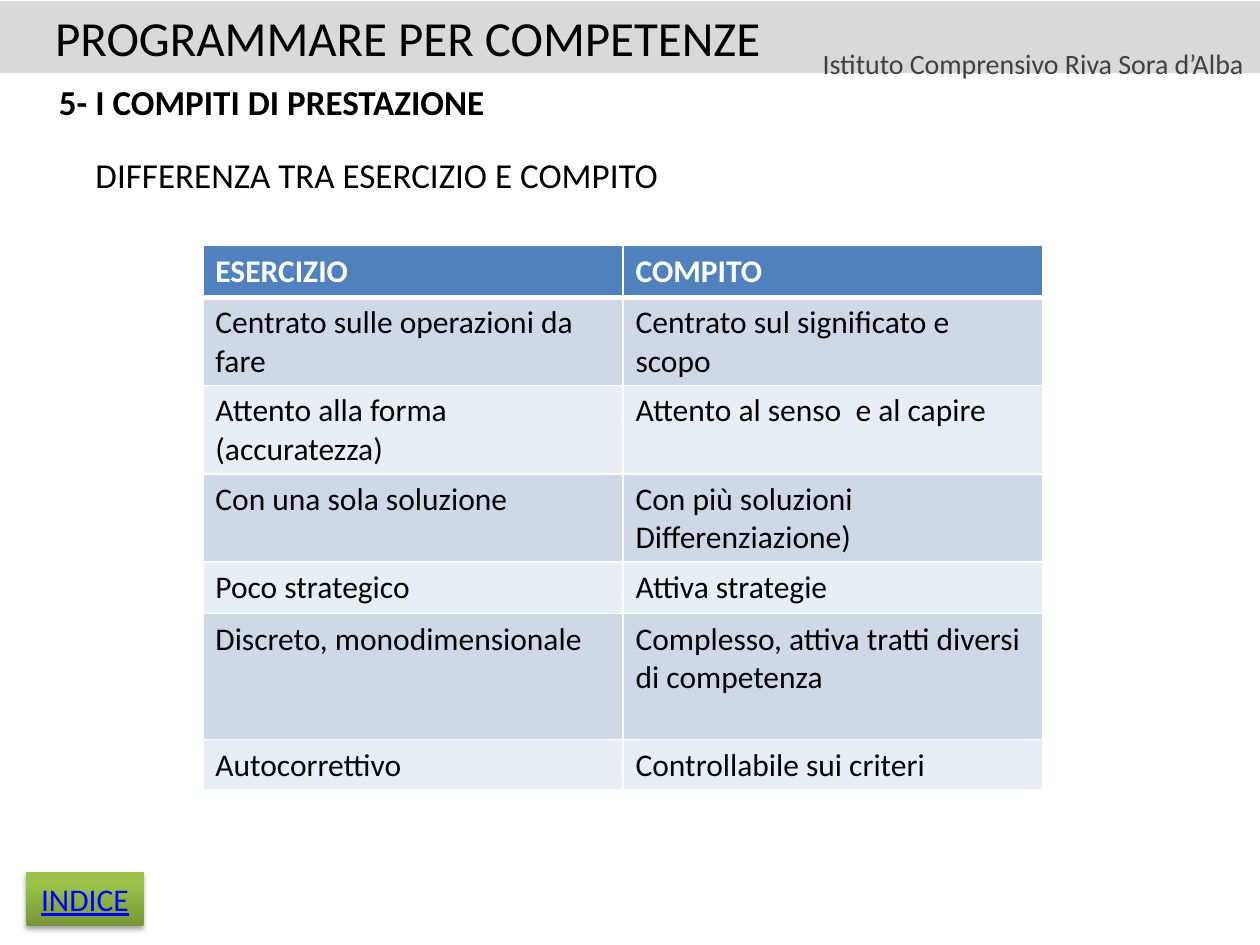
from lxml import etree
from pptx import Presentation
from pptx.dml.color import RGBColor
from pptx.enum.shapes import MSO_SHAPE
from pptx.enum.text import MSO_ANCHOR, PP_ALIGN
from pptx.oxml.ns import qn
from pptx.util import Inches, Pt

RECT = MSO_SHAPE.RECTANGLE
CENTER = PP_ALIGN.CENTER
MIDDLE = MSO_ANCHOR.MIDDLE

BLACK = RGBColor(0x00, 0x00, 0x00)
WHITE = RGBColor(0xFF, 0xFF, 0xFF)
GRAY = RGBColor(0xD9, 0xD9, 0xD9)
DARK = RGBColor(0x40, 0x40, 0x40)
BLUE = RGBColor(0x4F, 0x81, 0xBD)
BANDS = (RGBColor(0xE9, 0xED, 0xF4), RGBColor(0xD0, 0xD8, 0xE8))
LINK = RGBColor(0x00, 0x00, 0xFF)
MOSS = RGBColor(0x77, 0x97, 0x37)
LIME = RGBColor(0x9B, 0xC3, 0x48)

ROWS = [
    ("ESERCIZIO", "COMPITO"),
    ("Centrato sulle operazioni da fare", "Centrato sul significato e scopo"),
    ("Attento alla forma (accuratezza)", "Attento al senso  e al capire"),
    ("Con una sola soluzione", "Con più soluzioni Differenziazione)"),
    ("Poco strategico", "Attiva strategie"),
    ("Discreto, monodimensionale",
     "Complesso, attiva tratti diversi di competenza"),
    ("Autocorrettivo", "Controllabile sui criteri"),
]
HEIGHTS = (0.41, 0.7, 0.7, 0.7, 0.41, 1.0, 0.4)


def write(frame, text, size, color=BLACK, bold=False):
    frame.text = text
    para = frame.paragraphs[0]
    font = para.runs[0].font
    font.name = "Calibri"
    font.size = Pt(size)
    font.bold = bold
    font.color.rgb = color
    return para


def add_text(slide, box, text, size, color=BLACK, bold=False, wrap=True):
    frame = slide.shapes.add_textbox(*map(Inches, box)).text_frame
    frame.word_wrap = wrap
    return write(frame, text, size, color, bold)


def add_rect(slide, box):
    rect = slide.shapes.add_shape(RECT, *map(Inches, box))
    rect.shadow.inherit = False
    rect.line.fill.background()
    return rect


def add_edge(cell, side, width):
    props = cell._tc.get_or_add_tcPr()
    edge = etree.SubElement(props, qn(f"a:ln{side}"), w=str(Pt(width)))
    fill = etree.SubElement(edge, qn("a:solidFill"))
    etree.SubElement(fill, qn("a:srgbClr"), val=str(WHITE))


def add_grid(slide):
    frame = slide.shapes.add_table(
        len(ROWS), 2, Inches(1.61), Inches(1.95),
        Inches(6.67), Inches(sum(HEIGHTS)))
    table = frame.table
    for i, (row, high) in enumerate(zip(ROWS, HEIGHTS)):
        table.rows[i].height = Inches(high)
        head = i == 0
        for j, text in enumerate(row):
            cell = table.cell(i, j)
            write(cell.text_frame, text, 18, WHITE if head else BLACK, head)
            for side in "LRTB":
                thick = (head and side == "B") or (i == 1 and side == "T")
                add_edge(cell, side, 3 if thick else 1)
            cell.fill.solid()
            cell.fill.fore_color.rgb = BLUE if head else BANDS[i % 2]


def add_shadow(shape):
    effects = shape._element.spPr.find(qn("a:effectLst"))
    shade = etree.SubElement(
        effects, qn("a:outerShdw"), blurRad=str(Pt(3.1)), dist=str(Pt(1.8)),
        dir="5400000", rotWithShape="0")
    color = etree.SubElement(shade, qn("a:srgbClr"), val=str(BLACK))
    etree.SubElement(color, qn("a:alpha"), val="35000")


def add_button(slide):
    button = add_rect(slide, (0.21, 6.92, 0.93, 0.43))
    fill = button.fill
    fill.gradient()
    fill.gradient_angle = 90
    for stop, color, place in zip(fill.gradient_stops, (MOSS, LIME), (0, 0.8)):
        stop.color.rgb = color
        stop.position = place
    add_shadow(button)
    frame = button.text_frame
    frame.vertical_anchor = MIDDLE
    para = write(frame, "INDICE", 18, LINK)
    para.alignment = CENTER
    para.runs[0].font.underline = True


def main():
    deck = Presentation()
    deck.slide_width, deck.slide_height = Inches(10), Inches(7.5)
    slide = deck.slides.add_slide(deck.slide_layouts[6])
    add_text(slide, (0.66, 1.17, 7.17, 0.44),
             "DIFFERENZA TRA ESERCIZIO E COMPITO", 20)
    add_grid(slide)
    add_text(slide, (0.37, 0.59, 9.43, 0.44),
             "5- I COMPITI DI PRESTAZIONE", 20, bold=True)
    band = add_rect(slide, (0, 0.01, 10, 0.57))
    band.fill.solid()
    band.fill.fore_color.rgb = GRAY
    add_text(slide, (0.34, 0.01, 5.86, 0.57),
             "PROGRAMMARE PER COMPETENZE", 28, wrap=False)
    school = add_text(slide, (6.24, 0.32, 3.92, 0.32),
                      "Istituto Comprensivo Riva Sora d’Alba", 16, DARK)
    school.alignment = CENTER
    add_button(slide)
    deck.save("out.pptx")


if __name__ == "__main__":
    main()
